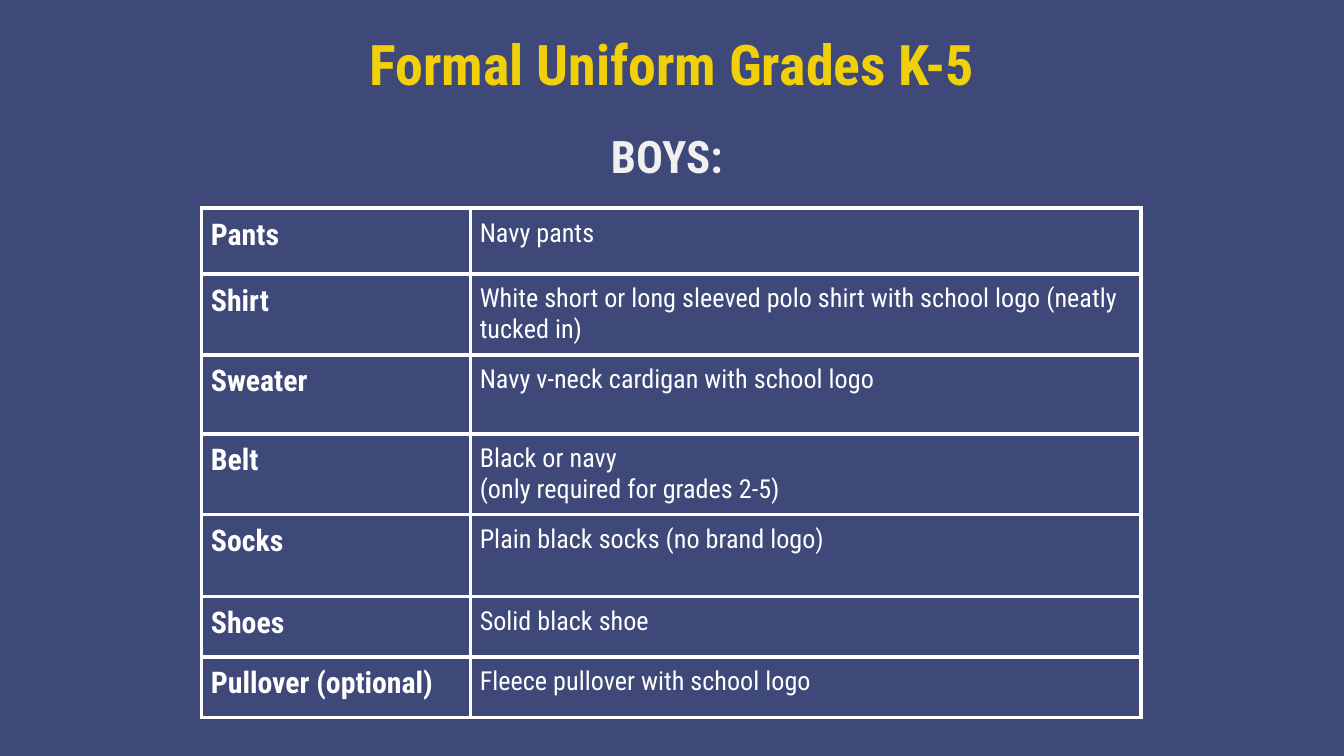
from pptx import Presentation
from pptx.dml.color import RGBColor
from pptx.enum.text import MSO_ANCHOR, MSO_AUTO_SIZE, PP_ALIGN
from pptx.oxml import parse_xml
from pptx.oxml.ns import nsdecls
from pptx.util import Inches, Pt

FONT = "Roboto Condensed"
NAVY = RGBColor(0x3E, 0x49, 0x7A)
YELLOW = RGBColor(0xF1, 0xD0, 0x0A)
LIGHT = RGBColor(0xF0, 0xF0, 0xF0)
WHITE = RGBColor(0xFF, 0xFF, 0xFF)

SLIDE_WIDTH = 10
SLIDE_HEIGHT = SLIDE_WIDTH * 9 / 16
COLUMN_WIDTHS = [2, 4.99]
# Item, description lines, row height in inches
UNIFORM = [
    ("Pants", ["Navy pants"], 0.49),
    ("Shirt", ["White short or long sleeved polo shirt with school logo (neatly tucked in)"], 0.6),
    ("Sweater", ["Navy v-neck cardigan with school logo"], 0.59),
    ("Belt", ["Black or navy", "(only required for grades 2-5)"], 0.59),
    ("Socks", ["Plain black socks (no brand logo)"], 0.61),
    ("Shoes", ["Solid black shoe"], 0.45),
    ("Pullover (optional)", ["Fleece pullover with school logo"], 0.45),
]


def write_text(frame, lines, *, size, color=WHITE, bold=False,
               align=PP_ALIGN.LEFT, spacing=None):
    """Fill a text frame with one paragraph per line."""
    for index, line in enumerate(lines):
        para = frame.paragraphs[0] if index == 0 else frame.add_paragraph()
        para.alignment = align
        para.space_before = Pt(0)
        if spacing:
            para.line_spacing = spacing
        span = para.add_run()
        span.text = line
        span.font.name = FONT
        span.font.size = Pt(size)
        span.font.bold = bold
        span.font.color.rgb = color


def add_heading(box, text, left, top, width, height, **text_format):
    """Place a box and give it a centred bold heading."""
    box.left, box.top = Inches(left), Inches(top)
    box.width, box.height = Inches(width), Inches(height)
    frame = box.text_frame
    frame.word_wrap = True
    frame.auto_size = MSO_AUTO_SIZE.NONE
    frame.vertical_anchor = MSO_ANCHOR.TOP
    frame.margin_left = frame.margin_right = Inches(0.1)
    frame.margin_top = frame.margin_bottom = Inches(0.1)
    write_text(frame, [text], bold=True, align=PP_ALIGN.CENTER, **text_format)


def set_borders(cell, color, width):
    """Draw a solid line on all four sides of a cell."""
    properties = cell._tc.get_or_add_tcPr()
    for index, side in enumerate(("lnL", "lnR", "lnT", "lnB")):
        properties.insert(index, parse_xml(
            f'<a:{side} {nsdecls("a")} w="{Pt(width)}"><a:solidFill>'
            f'<a:srgbClr val="{color}"/></a:solidFill></a:{side}>'))


def fill_cell(cell, lines, **text_format):
    cell.margin_left = cell.margin_right = Inches(0.07)
    cell.margin_top = cell.margin_bottom = Inches(0.07)
    cell.vertical_anchor = MSO_ANCHOR.TOP
    cell.fill.background()
    set_borders(cell, WHITE, 2.25)
    write_text(cell.text_frame, lines, **text_format)


def add_uniform_table(page, left, top):
    total_height = sum(height for _, _, height in UNIFORM)
    table = page.shapes.add_table(
        len(UNIFORM), len(COLUMN_WIDTHS), Inches(left), Inches(top),
        Inches(sum(COLUMN_WIDTHS)), Inches(total_height)).table
    table.first_row = False
    table.horz_banding = False
    for column, width in zip(table.columns, COLUMN_WIDTHS):
        column.width = Inches(width)
    for row, (item, description, height) in zip(table.rows, UNIFORM):
        row.height = Inches(height)
        fill_cell(row.cells[0], [item], size=16, bold=True)
        fill_cell(row.cells[1], description, size=14)


def main():
    deck = Presentation()
    deck.slide_width = Inches(SLIDE_WIDTH)
    deck.slide_height = Inches(SLIDE_HEIGHT)
    page = deck.slides.add_slide(deck.slide_layouts[5])
    page.background.fill.solid()
    page.background.fill.fore_color.rgb = NAVY

    # Title and subheading
    add_heading(page.shapes.title, "Formal Uniform Grades K-5",
                0, 0.12, SLIDE_WIDTH, 0.63, size=30, color=YELLOW)
    subheading = page.shapes.add_textbox(0, 0, 0, 0)
    add_heading(subheading, "BOYS: ", 2.5, 0.8, 5, 0.56,
                size=24, color=LIGHT, spacing=1.15)

    # Uniform list
    add_uniform_table(page, 1.5, 1.55)
    deck.save("out.pptx")


if __name__ == "__main__":
    main()
